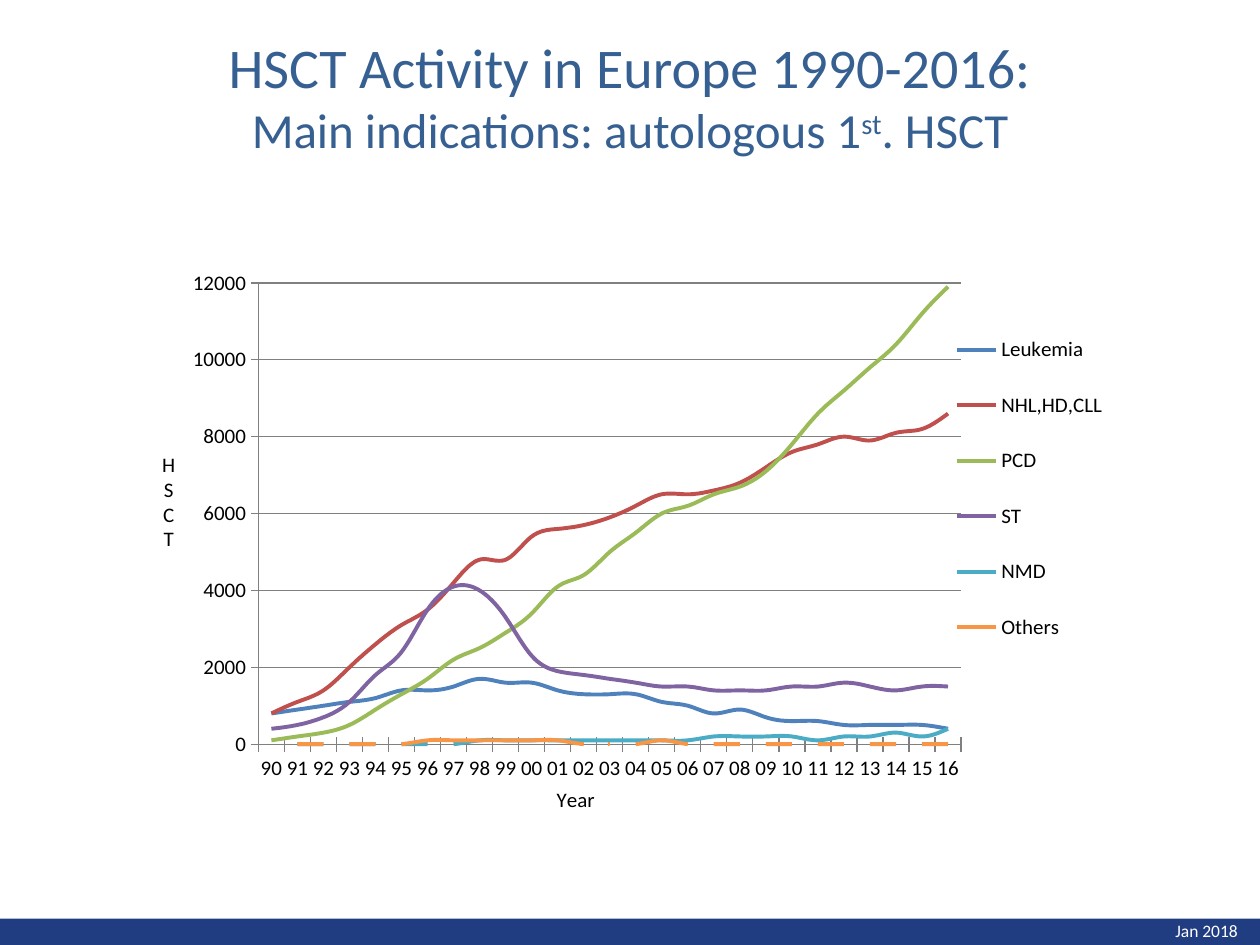
from lxml.etree import SubElement
from pptx import Presentation
from pptx.chart.data import CategoryChartData
from pptx.dml.color import RGBColor
from pptx.enum.chart import XL_CHART_TYPE as ChartType, XL_LEGEND_POSITION as LegendPosition
from pptx.enum.chart import XL_TICK_MARK as TickMark
from pptx.enum.shapes import MSO_SHAPE as Shape
from pptx.enum.text import MSO_AUTO_SIZE as AutoSize, PP_ALIGN as Align
from pptx.oxml.ns import qn
from pptx.util import Inches, Pt

WHITE = RGBColor(0xFF, 0xFF, 0xFF)
BLACK = RGBColor(0, 0, 0)
GRAY = RGBColor(0x80, 0x80, 0x80)
NAVY = RGBColor(0x21, 0x3D, 0x82)
TITLE_BLUE = RGBColor(0x37, 0x60, 0x92)
BLUE = RGBColor(0x4F, 0x81, 0xBD)
RED = RGBColor(0xC0, 0x50, 0x4D)
GREEN = RGBColor(0x9B, 0xBB, 0x59)
PURPLE = RGBColor(0x80, 0x64, 0xA2)
TEAL = RGBColor(0x4B, 0xAC, 0xC6)
ORANGE = RGBColor(0xF7, 0x96, 0x46)

YEARS = [f"{year % 100:02d}" for year in range(1990, 2017)]

# Transplants per year, in hundreds
INDICATIONS = [
    ("Leukemia", BLUE, [8, 9, 10, 11, 12, 14, 14, 15, 17, 16, 16, 14, 13, 13,
                        13, 11, 10, 8, 9, 7, 6, 6, 5, 5, 5, 5, 4]),
    ("NHL,HD,CLL", RED, [8, 11, 14, 20, 26, 31, 35, 42, 48, 48, 54, 56, 57, 59,
                         62, 65, 65, 66, 68, 72, 76, 78, 80, 79, 81, 82, 86]),
    ("PCD", GREEN, [1, 2, 3, 5, 9, 13, 17, 22, 25, 29, 34, 41, 44, 50,
                    55, 60, 62, 65, 67, 71, 78, 86, 92, 98, 104, 112, 119]),
    ("ST", PURPLE, [4, 5, 7, 11, 18, 24, 35, 41, 40, 33, 23, 19, 18, 17,
                    16, 15, 15, 14, 14, 14, 15, 15, 16, 15, 14, 15, 15]),
    ("NMD", TEAL, [0, 0, 0, 0, 0, 0, 0, 0, 1, 1, 1, 1, 1, 1,
                   1, 1, 1, 2, 2, 2, 2, 1, 2, 2, 3, 2, 4]),
    ("Others", ORANGE, [0, 0, 0, 0, 0, 0, 1, 1, 1, 1, 1, 1, 0, 0,
                        0, 1, 0, 0, 0, 0, 0, 0, 0, 0, 0, 0, 0]),
]


def set_layout(element, index, x, y, width=None, height=None, inner=False):
    """Place a chart part at fractions of the chart area."""
    for old_layout in element.findall(qn("c:layout")):
        element.remove(old_layout)
    layout = element.makeelement(qn("c:layout"))
    element.insert(index, layout)
    manual = SubElement(layout, qn("c:manualLayout"))
    settings = [("layoutTarget", "inner" if inner else None),
                ("xMode", "edge"), ("yMode", "edge"),
                ("x", x), ("y", y), ("w", width), ("h", height)]
    for name, value in settings:
        if value is not None:
            SubElement(manual, qn(f"c:{name}")).set("val", str(value))


class SlideBuilder:
    def __init__(self, slide, font_name="Calibri"):
        self.slide = slide
        self.font_name = font_name

    def style_font(self, font, size, color):
        font.name = self.font_name
        font.size = Pt(size)
        font.bold = False
        font.color.rgb = color

    def bar(self, left, top, width, height, color):
        shape = self.slide.shapes.add_shape(
            Shape.RECTANGLE, Inches(left), Inches(top), Inches(width), Inches(height))
        shape.shadow.inherit = False
        shape.fill.solid()
        shape.fill.fore_color.rgb = color
        shape.line.fill.background()

    def text(self, left, top, width, height, lines, color, align=Align.LEFT, wrap=True):
        """Write lines of (size, [(text, is_superscript), ...]) in one paragraph."""
        box = self.slide.shapes.add_textbox(
            Inches(left), Inches(top), Inches(width), Inches(height))
        frame = box.text_frame
        frame.word_wrap = wrap
        frame.auto_size = AutoSize.NONE if wrap else AutoSize.SHAPE_TO_FIT_TEXT
        paragraph = frame.paragraphs[0]
        paragraph.alignment = align
        for number, (size, parts) in enumerate(lines):
            if number:
                paragraph.add_line_break()
            for text, is_superscript in parts:
                run = paragraph.add_run()
                run.text = text
                self.style_font(run.font, size, color)
                if is_superscript:
                    run.font.element.set("baseline", "30000") if hasattr(
                        run.font, "element") else run._r.get_or_add_rPr().set("baseline", "30000")

    def axis(self, axis, title, x, y):
        axis.major_tick_mark = TickMark.CROSS
        axis.minor_tick_mark = TickMark.NONE
        axis.format.line.color.rgb = GRAY
        self.style_font(axis.tick_labels.font, 12, BLACK)
        frame = axis.axis_title.text_frame
        frame.text = title
        self.style_font(frame.paragraphs[0].runs[0].font, 12, BLACK)
        title_element = next(frame._txBody.iterancestors(qn("c:title")))
        set_layout(title_element, 1, x, y)
        return title_element.find(".//" + qn("a:bodyPr"))

    def line_chart(self, left, top, width, height):
        data = CategoryChartData(number_format="0")
        data.categories = YEARS
        for name, _, hundreds in INDICATIONS:
            data.add_series(name, [value * 100 for value in hundreds])
        chart = self.slide.shapes.add_chart(
            ChartType.LINE, Inches(left), Inches(top), Inches(width), Inches(height), data).chart
        self.style_font(chart.font, 12, BLACK)
        chart.has_title = False
        chart.plots[0].vary_by_categories = False
        for series, (_, color, _) in zip(chart.plots[0].series, INDICATIONS):
            series.smooth = series.name != "Others"
            series.format.line.width = Pt(2.25)
            series.format.line.color.rgb = color

        self.axis(chart.category_axis, "Year", 0.42, 0.95)
        values = chart.value_axis
        values.minimum_scale = 0
        values.maximum_scale = 12000
        values.major_unit = 2000
        values.has_major_gridlines = True
        values.major_gridlines.format.line.color.rgb = GRAY
        body = self.axis(values, "HSCT", 0.01, 0.38)
        body.set("rot", "0")
        body.set("vert", "wordArtVert")

        chart.has_legend = True
        chart.legend.position = LegendPosition.RIGHT
        chart.legend.include_in_layout = False
        self.style_font(chart.legend.font, 12, BLACK)
        chart_element = chart.plots[0]._element.getparent().getparent()
        set_layout(chart_element.find(qn("c:legend")), 1, 0.83, 0.14, 0.17, 0.62)
        set_layout(chart_element.find(qn("c:plotArea")), 0, 0.114, 0.1, 0.73, 0.786, inner=True)


def main():
    presentation = Presentation()
    presentation.slide_width = Inches(10)
    presentation.slide_height = Inches(7.5)
    builder = SlideBuilder(presentation.slides.add_slide(presentation.slide_layouts[6]))
    builder.bar(0, 7.29, 10, 0.24, NAVY)
    builder.text(9.23, 7.25, 0.71, 0.27, [(10, [("Jan 2018", False)])], WHITE, wrap=False)
    builder.line_chart(1.18, 1.78, 7.64, 4.72)
    builder.text(0, 0.21, 10, 0.79, [
        (32, [("HSCT Activity in Europe 1990-2016:", False)]),
        (28, [("Main indications: autologous 1", False), ("st", True), (". HSCT", False)]),
    ], TITLE_BLUE, align=Align.CENTER)
    presentation.save("out.pptx")


if __name__ == "__main__":
    main()
